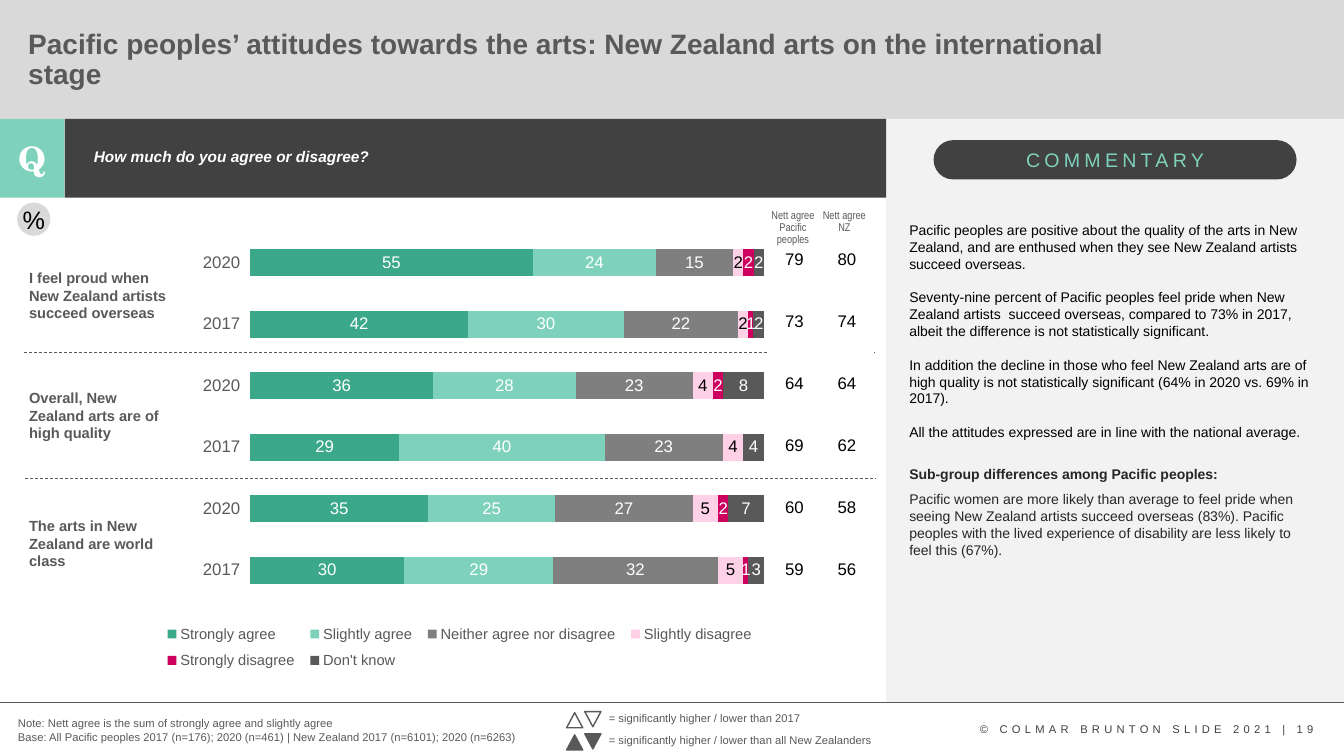
from lxml.etree import SubElement
from pptx import Presentation
from pptx.chart.data import CategoryChartData
from pptx.dml.color import RGBColor
from pptx.enum.chart import XL_CHART_TYPE, XL_LEGEND_POSITION, XL_TICK_MARK
from pptx.enum.dml import MSO_LINE
from pptx.enum.shapes import MSO_CONNECTOR, MSO_SHAPE
from pptx.enum.text import MSO_ANCHOR, MSO_AUTO_SIZE, PP_ALIGN
from pptx.oxml import parse_xml
from pptx.oxml.ns import nsdecls, qn
from pptx.util import Emu, Pt

SCALE = 9144
FONT = "Arial"
HUES = {
    "text": "595959", "black": "000000", "ink": "262626", "foot": "404040",
    "white": "FFFFFF", "band": "D9D9D9", "panel": "F2F2F2", "dark": "414141",
    "deep": "3AA889", "mint": "7ED2BB", "gray": "7F7F7F", "pink": "FFD1E6",
    "red": "CD005F",
}
YEARS = ["2017", "2020"] * 3
SERIES = [
    ("Strongly agree", [30, 35, 29, 36, 42, 55], "deep", "white"),
    ("Slightly agree", [29, 25, 40, 28, 30, 24], "mint", "white"),
    ("Neither agree nor disagree", [32, 27, 23, 23, 22, 15], "gray", "white"),
    ("Slightly disagree", [5, 5, 4, 4, 2, 2], "pink", "black"),
    ("Strongly disagree", [1, 2, 0, 2, 1, 2], "red", "white"),
    ("Don't know", [3, 7, 4, 8, 2, 2], "text", "white"),
]
NETT = [(79, 80), (73, 74), (64, 64), (69, 62), (60, 58), (59, 56)]
TOPICS = [
    (262, 170, "I feel proud when New Zealand artists succeed overseas"),
    (381, 161, "Overall, New Zealand arts are of high quality"),
    (508, 161, "The arts in New Zealand are world class"),
]
KEYS = [(701, "white", "= significantly higher / lower than 2017"),
        (723, "text", "= significantly higher / lower than all New Zealanders")]
VIEWS = [
    "Pacific peoples are positive about the quality of the arts in New Zealand, and are "
    "enthused when they see New Zealand artists succeed overseas.",
    ("Seventy-nine percent of Pacific peoples feel pride when New Zealand artists  succeed "
     "overseas, compared to 73% in 2017, albeit the difference is not statistically "
     "significant.", {"before": 12}),
    ("In addition the decline in those who feel New Zealand arts are of high quality is not "
     "statistically significant (64% in 2020 vs. 69% in 2017).", {"before": 12}),
    ("All the attitudes expressed are in line with the national average.", {"before": 12}),
    ("Sub-group differences among Pacific peoples:",
     {"before": 18, "hue": "ink", "bold": True}),
    ("Pacific women are more likely than average to feel pride when seeing New Zealand "
     "artists succeed overseas (83%). Pacific peoples with the lived experience of "
     "disability are less likely to feel this (67%).", {"before": 6, "hue": "ink"}),
]


def tint(name):
    return RGBColor.from_string(HUES[name])


def style(font, size, hue, face=FONT, bold=False, slant=False):
    font.size, font.name, font.bold, font.italic = Pt(size), face, bold, slant
    font.color.rgb = tint(hue)


def write(para, text, size=8, hue="text", align=PP_ALIGN.LEFT, lead=1.0, before=0,
          track=0, **look):
    para.alignment, para.line_spacing, para.space_before = align, lead, Pt(before)
    run = para.add_run()
    run.text = text
    style(run.font, size, hue, **look)
    if track:
        run.font._element.set("spc", str(track * 100))


class Deck:
    """Holds the style and current slide, and draws each kind of element."""

    def __init__(self):
        self.file = Presentation()
        self.file.slide_width, self.file.slide_height = self.px(1333, 750)
        self.slide = self.file.slides.add_slide(self.file.slide_layouts[1])
        self.shapes = self.slide.shapes

    def px(self, *nums):
        return [Emu(round(n * SCALE)) for n in nums]

    def fill(self, frame, items, **look):
        for i, item in enumerate(items):
            text, extra = (item, {}) if isinstance(item, str) else item
            para = frame.add_paragraph() if i else frame.paragraphs[0]
            write(para, text, **{**look, **extra})

    def text(self, box, *items, **look):
        frame = self.shapes.add_textbox(*self.px(*box)).text_frame
        frame.word_wrap = True
        self.fill(frame, items, **look)

    def holder(self, index, box, text, anchor, **look):
        item = self.slide.placeholders[index]
        item.left, item.top, item.width, item.height = self.px(*box)
        item.element.getparent().append(item.element)
        frame = item.text_frame
        frame.word_wrap, frame.auto_size = True, MSO_AUTO_SIZE.NONE
        frame.vertical_anchor = anchor
        props = frame.paragraphs[0]._p.get_or_add_pPr()
        props.set("marL", "0")
        props.set("indent", "0")
        SubElement(props, qn("a:buNone"))
        self.fill(frame, [text], lead=0.9, **look)

    def shape(self, box, fill, kind=MSO_SHAPE.RECTANGLE, text="", edge=None, turn=0, **look):
        item = self.shapes.add_shape(kind, *self.px(*box))
        item.shadow.inherit = False
        item.rotation = turn
        item.fill.solid()
        item.fill.fore_color.rgb = tint(fill)
        if edge:
            item.line.color.rgb, item.line.width = tint(edge), Pt(1)
        else:
            item.line.fill.background()
        if text:
            frame = item.text_frame
            frame.margin_left = frame.margin_right = 0
            frame.margin_top = frame.margin_bottom = 0
            frame.vertical_anchor = MSO_ANCHOR.MIDDLE
            self.fill(frame, [text], align=PP_ALIGN.CENTER, **look)
        return item

    def rule(self, left, right, top, dash=None):
        item = self.shapes.add_connector(MSO_CONNECTOR.STRAIGHT,
                                         *self.px(left, top, right, top))
        item.line.color.rgb, item.line.width = tint("text"), Pt(0.5)
        if dash:
            item.line.dash_style = dash
        SubElement(item.element.spPr, qn("a:effectLst"))

    def table(self, box, rows, **look):
        grid = self.shapes.add_table(len(rows), len(rows[0]), *self.px(*box)).table
        grid.first_row = grid.horz_banding = False
        for r, row in enumerate(rows):
            for c, value in enumerate(row):
                cell = grid.cell(r, c)
                cell.fill.background()
                cell.vertical_anchor = MSO_ANCHOR.MIDDLE
                self.fill(cell.text_frame, [str(value)], align=PP_ALIGN.CENTER, **look)

    def place(self, node, spots, target=""):
        old = node.find(qn("c:layout"))
        if old is not None:
            node.remove(old)
        tags = "".join(f'<c:{k} val="{v}"/>' for k, v in zip("xywh", spots))
        modes = '<c:xMode val="edge"/><c:yMode val="edge"/>'
        layout = parse_xml(f'<c:layout {nsdecls("c")}><c:manualLayout>{target}{modes}{tags}'
                           "</c:manualLayout></c:layout>")
        node.insert(1 if node.tag == qn("c:legend") else 0, layout)

    def chart(self, box):
        data = CategoryChartData()
        data.categories = YEARS
        for name, values, *_ in SERIES:
            data.add_series(name, values)
        chart = self.shapes.add_chart(XL_CHART_TYPE.BAR_STACKED_100, *self.px(*box),
                                      data).chart
        style(chart.font, 10, "black")
        chart.has_title = False
        plot = chart.plots[0]
        plot.gap_width, plot.overlap, plot.vary_by_categories = 126, 100, False
        for bars, (_, _, hue, ink) in zip(plot.series, SERIES):
            bars.format.fill.solid()
            bars.format.fill.fore_color.rgb = tint(hue)
            tags = bars.data_labels
            tags.show_value = True
            tags.number_format, tags.number_format_is_linked = "0;;", False
            style(tags.font, 12, ink)
        axis = chart.category_axis
        axis.major_tick_mark = XL_TICK_MARK.OUTSIDE
        axis.format.line.fill.background()
        style(axis.tick_labels.font, 12, "text")
        chart.value_axis.visible = False
        chart.value_axis.has_major_gridlines = False
        chart.has_legend = True
        chart.legend.position = XL_LEGEND_POSITION.BOTTOM
        chart.legend.include_in_layout = False
        style(chart.legend.font, 10.5, "text")
        area = chart._chartSpace.chart.plotArea
        self.place(area, (0.168, 0.138, 0.814, 0.655), '<c:layoutTarget val="inner"/>')
        self.place(chart.legend._element, (0.02, 0.82, 0.96, 0.11))


def main():
    deck = Deck()
    deck.shape((0, 0, 1333, 118), "band")
    deck.text((962, 712, 361, 24), "© COLMAR BRUNTON SLIDE 2021 | 19", hue="foot", track=3)
    deck.shape((879, 118, 454, 579), "panel")
    deck.rule(0, 1333, 697)
    deck.shape((64, 118, 815, 78), "dark")
    deck.shape((0, 118, 64, 78), "mint", text="Q", size=24, hue="white",
               face="TeX Gyre Schola", bold=True)
    pill = deck.shape((926, 139, 360, 39), "dark", MSO_SHAPE.ROUNDED_RECTANGLE,
                      "COMMENTARY", size=14, hue="mint", track=3)
    pill.adjustments[0] = 0.5
    deck.holder(0, (18, 21, 1119, 78),
                "Pacific peoples’ attitudes towards the arts: New Zealand arts on the "
                "international stage", MSO_ANCHOR.MIDDLE, size=20, bold=True)
    deck.holder(1, (83, 143, 760, 46), "How much do you agree or disagree?",
                MSO_ANCHOR.TOP, size=11, hue="white", bold=True, slant=True)
    deck.chart((143, 153, 626, 559))
    for top, width, topic in TOPICS:
        deck.text((19, top, width, 63), topic, size=10.5, bold=True)
    for left, top in ((24, 350), (25, 475)):
        deck.rule(left, left + 844, top, MSO_LINE.DASH)
    deck.table((762, 227, 104, 369), NETT, size=12, hue="black")
    deck.shape((17, 201, 33, 33), "band", MSO_SHAPE.OVAL, "%", size=18, hue="black")
    head = {"face": "Arial Narrow", "align": PP_ALIGN.CENTER, "lead": 0.9}
    deck.text((752, 203, 69, 46), "Nett agree Pacific peoples", **head)
    deck.text((803, 203, 69, 34), "Nett agree", "NZ", **head)
    deck.text((8, 706, 548, 37),
              "Note: Nett agree is the sum of strongly agree and slightly agree",
              "Base: All Pacific peoples 2017 (n=176); 2020 (n=461) | "
              "New Zealand 2017 (n=6101); 2020 (n=6263)")
    for top, fill, text in KEYS:
        deck.text((594, top, 290, 24), text)
        for left, drop, turn in ((562, 6, 0), (580, 5, 180)):
            deck.shape((left, top + drop, 16, 15), fill, MSO_SHAPE.ISOSCELES_TRIANGLE,
                       edge="text", turn=turn)
    deck.text((892, 215, 424, 347), *VIEWS, size=10, hue="black")
    deck.file.save("out.pptx")


if __name__ == "__main__":
    main()
